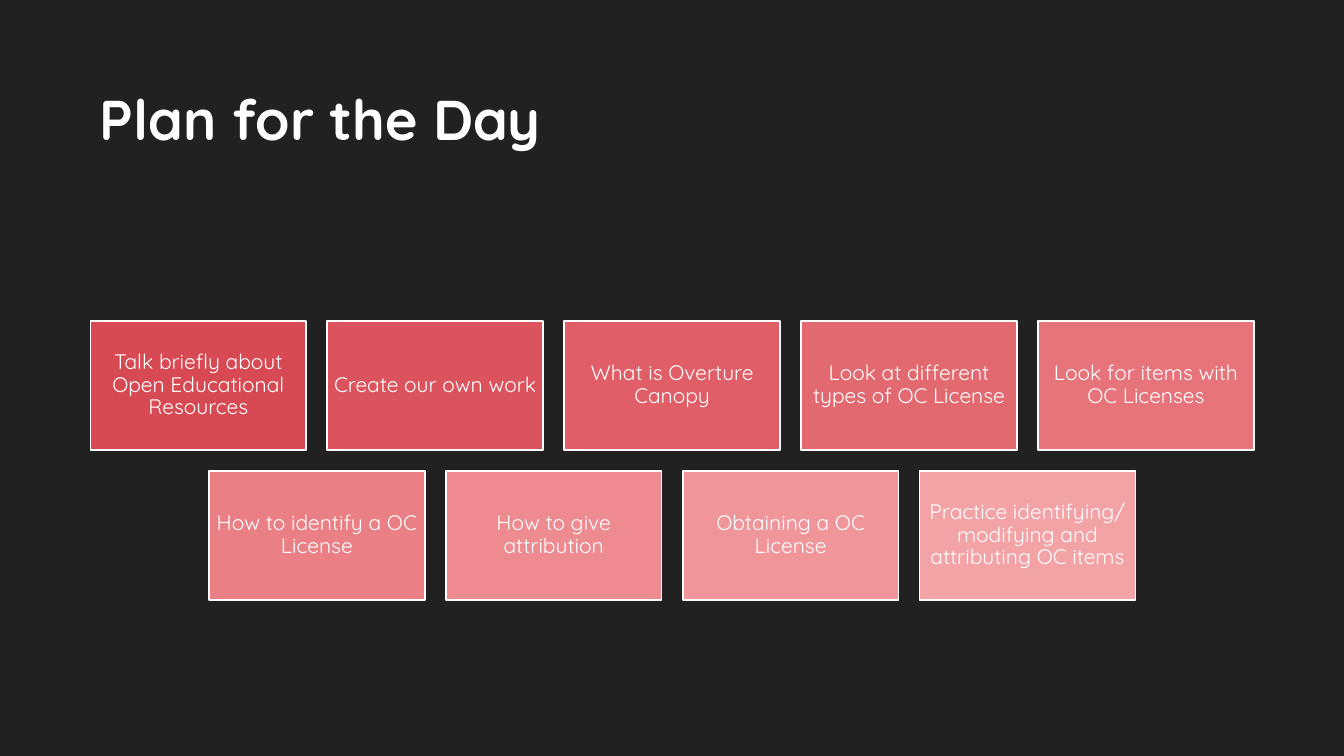
from pptx import Presentation
from pptx.dml.color import RGBColor
from pptx.enum.shapes import MSO_SHAPE
from pptx.enum.text import MSO_ANCHOR, MSO_AUTO_SIZE, PP_ALIGN
from pptx.util import Cm, Pt

RECTANGLE = MSO_SHAPE.RECTANGLE
MIDDLE, BOTTOM = MSO_ANCHOR.MIDDLE, MSO_ANCHOR.BOTTOM
LEFT, CENTER = PP_ALIGN.LEFT, PP_ALIGN.CENTER
NO_AUTOFIT = MSO_AUTO_SIZE.NONE

FONT = "Quicksand"
COLORS = {"background": "212121", "title": "FEFEFE", "tile_text": "FFFFFF", "border": "FFFFFF"}
TITLE_BOX = (Cm(2.26), Cm(1.25), Cm(29.36), Cm(2.69))
PLAN_BOX = (Cm(2.28), Cm(8.09), Cm(29.32), Cm(7.03))
GAP = Cm(0.53)
PLAN_ROWS = [
    [
        ("Talk briefly about Open Educational Resources", "D74A53"),
        ("Create our own work", "DB545D"),
        ("What is Overture Canopy", "DF5E67"),
        ("Look at different types of OC License", "E36970"),
        ("Look for items with OC Licenses", "E7747B"),
    ],
    [
        ("How to identify a OC License", "EA7F85"),
        ("How to give attribution", "ED8B90"),
        ("Obtaining a OC License", "F0969B"),
        ("Practice identifying/ modifying and attributing OC items", "F3A2A6"),
    ],
]


def rgb(value):
    return RGBColor.from_string(value)


def add_span(para, text, size, color, bold=False):
    span = para.add_run()
    span.text = text
    span.font.name = FONT
    span.font.size = Pt(size)
    span.font.bold = bold
    span.font.color.rgb = rgb(color)


def place_title(page, box, text):
    title = page.shapes.title
    title.left, title.top, title.width, title.height = box
    frame = title.text_frame
    frame.auto_size = NO_AUTOFIT
    frame.word_wrap = True
    frame.vertical_anchor = BOTTOM
    para = frame.paragraphs[0]
    para.alignment = LEFT
    add_span(para, text, 40, COLORS["title"], bold=True)


def add_tile(page, box, text, fill):
    tile = page.shapes.add_shape(RECTANGLE, *box)
    tile.shadow.inherit = False
    tile.fill.solid()
    tile.fill.fore_color.rgb = rgb(fill)
    tile.line.color.rgb = rgb(COLORS["border"])
    tile.line.width = Pt(1.25)
    frame = tile.text_frame
    frame.word_wrap = True
    frame.vertical_anchor = MIDDLE
    frame.margin_left = frame.margin_right = Cm(0.15)
    frame.margin_top = frame.margin_bottom = Cm(0.15)
    para = frame.paragraphs[0]
    para.alignment = CENTER
    para.line_spacing = 0.9
    add_span(para, text, 15, COLORS["tile_text"])


def add_plan(page, box, rows):
    """Fill the box with equal tiles, centring each row within it."""
    left, top, width, height = box
    columns = max(len(row) for row in rows)
    tile_width = (width - (columns - 1) * GAP) // columns
    tile_height = (height - (len(rows) - 1) * GAP) // len(rows)
    for row_index, row in enumerate(rows):
        row_left = left + (columns - len(row)) * (tile_width + GAP) // 2
        tile_top = top + row_index * (tile_height + GAP)
        for column, (text, fill) in enumerate(row):
            tile_left = row_left + column * (tile_width + GAP)
            add_tile(page, (tile_left, tile_top, tile_width, tile_height), text, fill)


def main():
    deck = Presentation()
    deck.slide_width, deck.slide_height = Cm(33.87), Cm(19.05)
    page = deck.slides.add_slide(deck.slide_layouts.get_by_name("Title Only"))
    page.background.fill.solid()
    page.background.fill.fore_color.rgb = rgb(COLORS["background"])
    place_title(page, TITLE_BOX, "Plan for the Day")
    add_plan(page, PLAN_BOX, PLAN_ROWS)
    deck.save("out.pptx")


if __name__ == "__main__":
    main()
